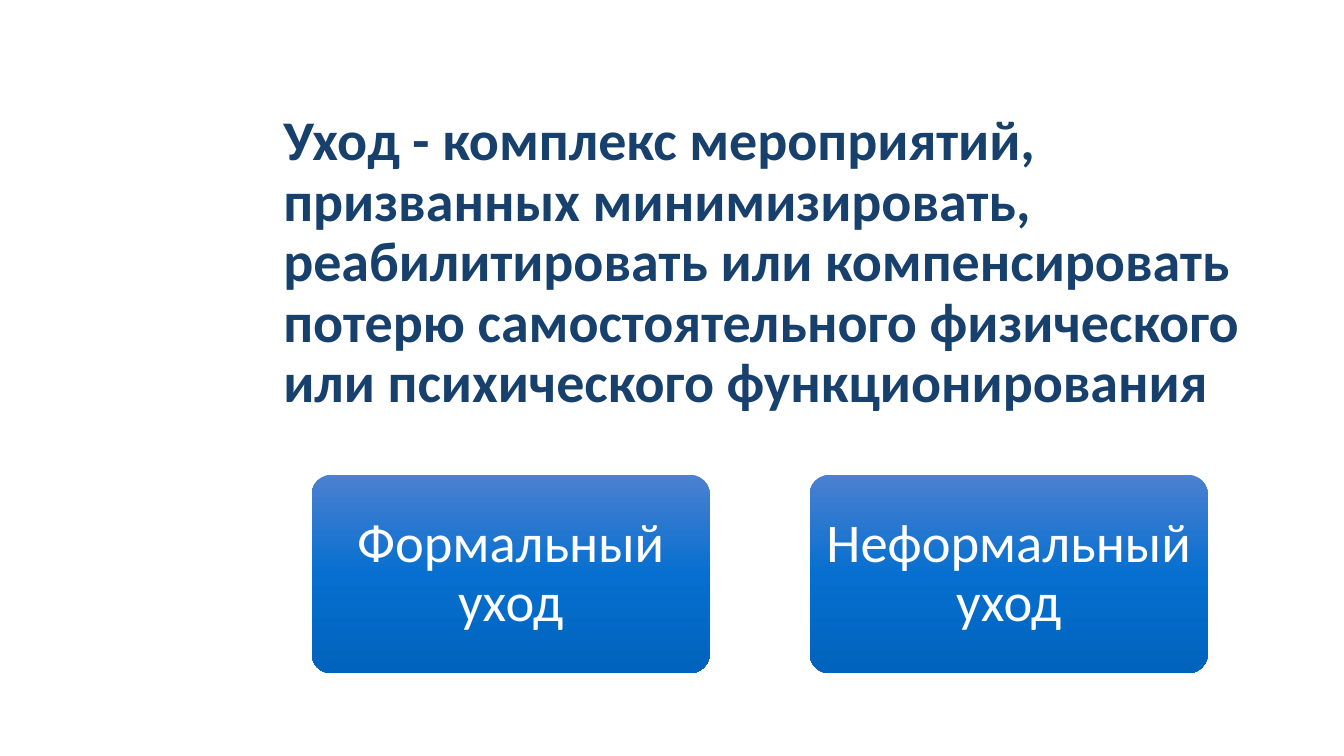
"""Build a slide that defines care and names its two kinds."""
import copy
from dataclasses import dataclass

import pptx
import pptx.dml.color
import pptx.enum.dml
import pptx.enum.shapes
import pptx.enum.text
import pptx.presentation
import pptx.shapes.autoshape
import pptx.slide
import pptx.util
from pptx.util import Inches


@dataclass(frozen=True)
class Theme:
    font: str = "Calibri"
    title_color: str = "17406D"
    card_text_color: str = "FFFFFF"
    card_gradient: tuple[str, ...] = ("4C80D0", "066FCF", "0063BD")
    title_size: int = 40
    card_size: int = 39
    line_spacing: float = 0.9


@dataclass(frozen=True)
class Card:
    label: str
    left: float
    top: float = 4.71
    width: float = 3.95
    height: float = 1.97


THEME = Theme()
TITLE = (
    "Уход - комплекс мероприятий, призванных минимизировать, "
    "реабилитировать или компенсировать потерю самостоятельного "
    "физического или психического функционирования"
)
CARD_LABELS = ("Формальный уход", "Неформальный уход")
FIRST_CARD_LEFT = 3.09
CARD_STEP = 4.94


def write_text(
    shape: pptx.shapes.autoshape.Shape,
    text: str,
    size: int,
    color: str,
    alignment: pptx.enum.text.PP_ALIGN,
    bold: bool = False,
) -> None:
    frame = shape.text_frame
    frame.text = text
    frame.word_wrap = True
    frame.auto_size = pptx.enum.text.MSO_AUTO_SIZE.NONE
    frame.vertical_anchor = pptx.enum.text.MSO_ANCHOR.MIDDLE
    paragraph = frame.paragraphs[0]
    paragraph.alignment = alignment
    paragraph.line_spacing = THEME.line_spacing
    paragraph.font.name = THEME.font
    paragraph.font.size = pptx.util.Pt(size)
    paragraph.font.bold = bold
    paragraph.font.color.rgb = pptx.dml.color.RGBColor.from_string(color)


def fill_gradient(shape: pptx.shapes.autoshape.Shape, colors: tuple[str, ...]) -> None:
    fill = shape.fill
    fill.gradient()
    fill.gradient_angle = 270
    stop_list = shape.element.spPr.find(pptx.oxml.ns.qn("a:gradFill")).gsLst
    while len(stop_list) < len(colors):
        stop_list.append(copy.deepcopy(stop_list[0]))
    for index, (stop, color) in enumerate(zip(fill.gradient_stops, colors)):
        stop.position = index / (len(colors) - 1)
        stop.color.rgb = pptx.dml.color.RGBColor.from_string(color)


def add_title(slide: pptx.slide.Slide) -> None:
    title = slide.shapes.title
    title.left, title.top = Inches(2.71), Inches(1.05)
    title.width, title.height = Inches(10.07), Inches(3.13)
    write_text(title, TITLE, THEME.title_size, THEME.title_color,
               pptx.enum.text.PP_ALIGN.LEFT, bold=True)


def add_card(slide: pptx.slide.Slide, card: Card) -> None:
    shape = slide.shapes.add_shape(
        pptx.enum.shapes.MSO_SHAPE.ROUNDED_RECTANGLE,
        Inches(card.left), Inches(card.top), Inches(card.width), Inches(card.height),
    )
    shape.adjustments[0] = 0.1
    shape.shadow.inherit = False
    shape.line.fill.background()
    fill_gradient(shape, THEME.card_gradient)
    frame = shape.text_frame
    frame.margin_left = frame.margin_right = Inches(0.08)
    frame.margin_top = frame.margin_bottom = Inches(0.05)
    write_text(shape, card.label, THEME.card_size, THEME.card_text_color,
               pptx.enum.text.PP_ALIGN.CENTER)


def main() -> None:
    presentation = pptx.Presentation()
    presentation.slide_width = Inches(13.33)
    presentation.slide_height = Inches(7.5)
    slide = presentation.slides.add_slide(presentation.slide_layouts.get_by_name("Title Only"))
    add_title(slide)
    for index, label in enumerate(CARD_LABELS):
        add_card(slide, Card(label, FIRST_CARD_LEFT + index * CARD_STEP))
    presentation.save("out.pptx")


if __name__ == "__main__":
    main()
